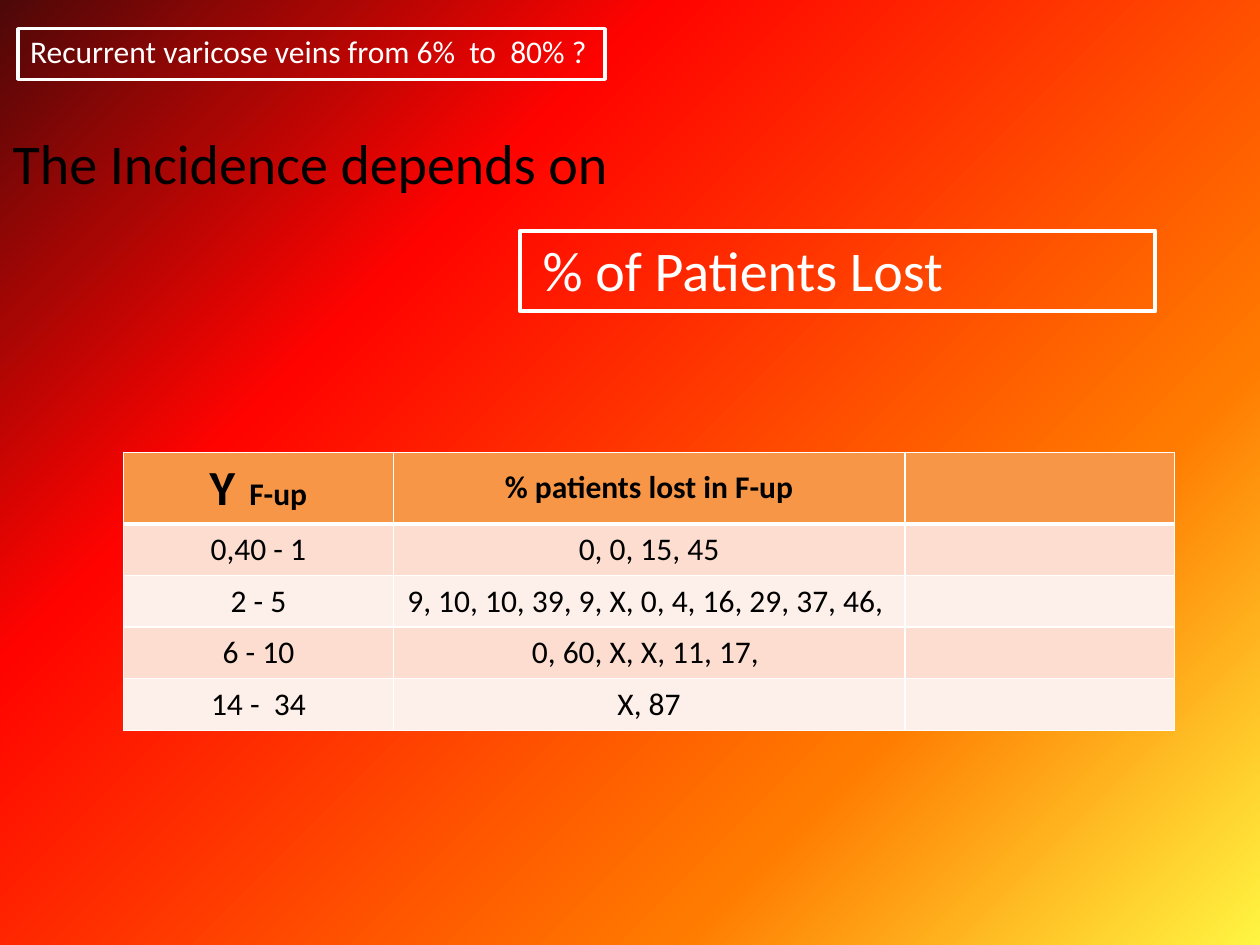
from lxml.etree import SubElement
from pptx import Presentation
from pptx.dml.color import RGBColor
from pptx.enum.shapes import MSO_SHAPE as Shape
from pptx.enum.text import MSO_ANCHOR as Anchor, MSO_AUTO_SIZE as AutoSize, PP_ALIGN as Align
from pptx.oxml.ns import qn
from pptx.util import Cm, Pt

THEME = {
    "font": "Calibri", "heading": 32, "lead": 28, "body": 18,
    "light": "FFFFFF", "dark": "000000",
    "header": "F79646", "bands": ("FCDDCF", "FDEFE9"),
    "backdrop": ((0, "FFF542"), (27, "FF7A00"), (70, "FF0300"),
                 (85, "A60604"), (100, "4D0808")),
    "backdrop_angle": 135,
}

TOPIC = "Recurrent varicose veins from 6%  to  80% ?"
TITLE = "The Incidence depends on"
FACTOR = "% of Patients Lost"
# Each cell is a tuple of (text, size) runs in the header, plain text below.
HEADER = (
    (("Y", THEME["lead"]), ("  F-up", THEME["body"])),
    (("% patients lost in F-up", THEME["body"]),),
    (),
)
FOLLOW_UP = (
    ("0,40 - 1", "0, 0, 15, 45"),
    ("2 - 5", "9, 10, 10, 39, 9, X, 0, 4, 16, 29, 37, 46, "),
    ("6 - 10", "0, 60, X, X, 11, 17, "),
    ("14 -  34", "X, 87"),
)
COLUMN_WIDTHS = (5.44, 10.31, 5.44)
HEADER_HEIGHT, ROW_HEIGHT = 1.4, 1.04
THIN, THICK = 1, 3


def rgb(color):
    return RGBColor.from_string(color)


def style_run(run, size, color, bold=False):
    run.font.name = THEME["font"]
    run.font.size = Pt(size)
    run.font.bold = bold
    run.font.color.rgb = rgb(color)


def paint_backdrop(slide):
    fill = slide.background.fill
    fill.gradient()
    fill.gradient_angle = THEME["backdrop_angle"]
    stops = next(slide.element.iter(qn("a:gsLst")))
    for stop in list(stops):
        stops.remove(stop)
    for percent, color in THEME["backdrop"]:
        stop = SubElement(stops, qn("a:gs"), pos=str(percent * 1000))
        SubElement(stop, qn("a:srgbClr"), val=color)


def write_line(box, text, size, color):
    frame = box.text_frame
    frame.text = text
    frame.word_wrap = True
    frame.auto_size = AutoSize.SHAPE_TO_FIT_TEXT
    frame.vertical_anchor = Anchor.TOP
    frame.paragraphs[0].alignment = Align.LEFT
    style_run(frame.paragraphs[0].runs[0], size, color)


def add_outline(shapes, left, top, width, height, weight):
    outline = shapes.add_shape(Shape.RECTANGLE, Cm(left), Cm(top), Cm(width), Cm(height))
    outline.shadow.inherit = False
    outline.fill.background()
    outline.line.color.rgb = rgb(THEME["light"])
    outline.line.width = Pt(weight)


def add_label(shapes, text, size, left, top, width, height):
    label = shapes.add_textbox(Cm(left), Cm(top), Cm(width), Cm(height))
    write_line(label, text, size, THEME["light"])


def style_cell(cell, fill, top, bottom):
    """Draw the four borders, then the fill, in the order the schema asks for."""
    properties = cell._tc.get_or_add_tcPr()
    for side, weight in (("L", THIN), ("R", THIN), ("T", top), ("B", bottom)):
        border = SubElement(properties, qn(f"a:ln{side}"), w=str(Pt(weight)))
        solid = SubElement(border, qn("a:solidFill"))
        SubElement(solid, qn("a:srgbClr"), val=THEME["light"])
    cell.fill.solid()
    cell.fill.fore_color.rgb = rgb(fill)
    cell.vertical_anchor = Anchor.MIDDLE


def add_follow_up_table(shapes, left, top):
    body = [tuple(((text, THEME["body"]),) for text in row) + ((),) for row in FOLLOW_UP]
    rows = [HEADER] + body
    height = HEADER_HEIGHT + ROW_HEIGHT * len(body)
    table = shapes.add_table(len(rows), len(COLUMN_WIDTHS), Cm(left), Cm(top),
                             Cm(sum(COLUMN_WIDTHS)), Cm(height)).table
    for column, width in zip(table.columns, COLUMN_WIDTHS):
        column.width = Cm(width)
    for r, row in enumerate(rows):
        is_header = r == 0
        table.rows[r].height = Cm(HEADER_HEIGHT if is_header else ROW_HEIGHT)
        fill = THEME["header"] if is_header else THEME["bands"][(r - 1) % 2]
        for c, runs in enumerate(row):
            cell = table.cell(r, c)
            style_cell(cell, fill, THICK if r == 1 else THIN, THICK if is_header else THIN)
            paragraph = cell.text_frame.paragraphs[0]
            paragraph.alignment = Align.CENTER
            for text, size in runs:
                run = paragraph.add_run()
                run.text = text
                style_run(run, size, THEME["dark"], bold=is_header)


def main():
    deck = Presentation()
    deck.slide_width, deck.slide_height = Cm(25.4), Cm(19.05)
    slide = deck.slides.add_slide(deck.slide_layouts[5])
    shapes = slide.shapes
    paint_backdrop(slide)

    title = shapes.title
    title.left, title.top, title.width, title.height = Cm(0), Cm(2.46), Cm(16.97), Cm(1.63)
    write_line(title, TITLE, THEME["heading"], THEME["dark"])

    topic = shapes.add_group_shape().shapes
    add_outline(topic, 0.36, 0.58, 11.84, 1.02, 2)
    add_label(topic, TOPIC, THEME["body"], 0.36, 0.53, 11.86, 1.02)

    add_label(shapes, FACTOR, THEME["heading"], 10.69, 4.62, 12.37, 1.63)
    add_outline(shapes, 10.49, 4.65, 12.8, 1.63, 2.25)
    add_follow_up_table(shapes, 2.49, 9.12)
    deck.save("out.pptx")


if __name__ == "__main__":
    main()
